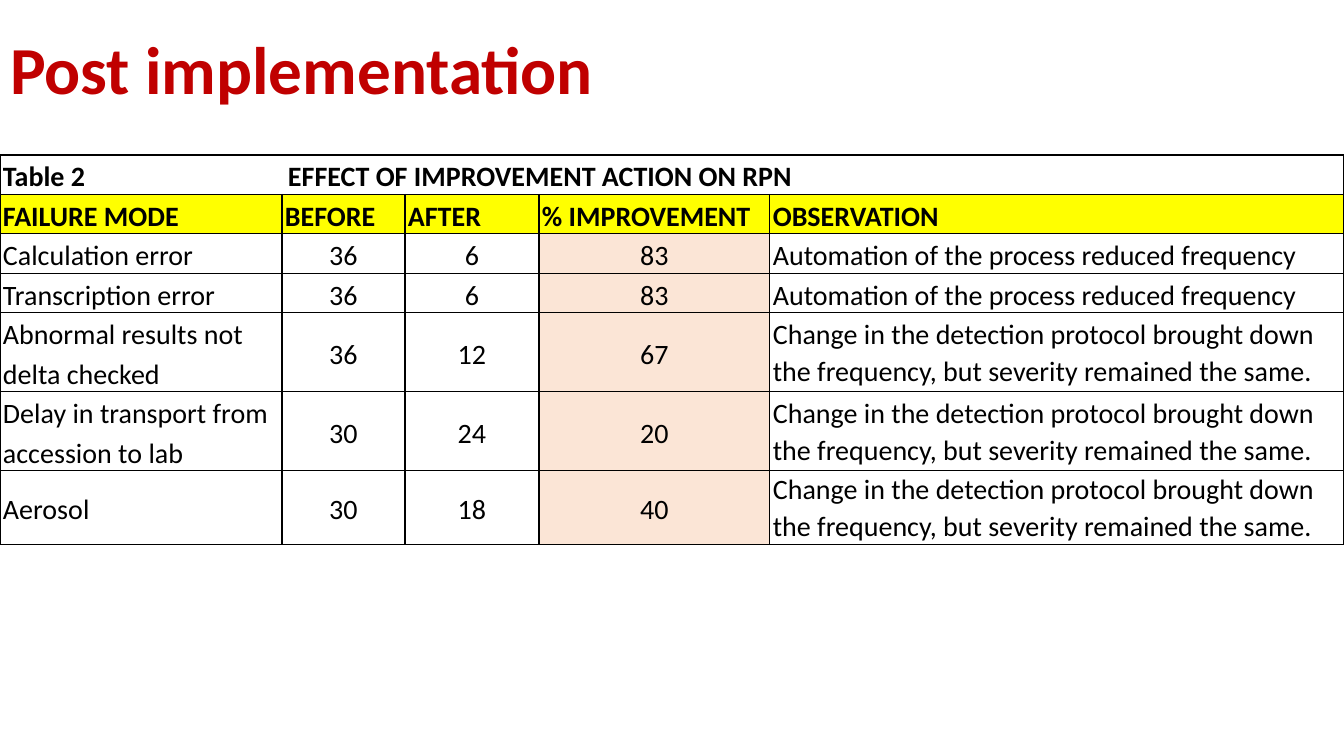
from lxml import etree
from pptx import Presentation
from pptx.dml.color import RGBColor
from pptx.enum.text import MSO_ANCHOR, MSO_AUTO_SIZE, PP_ALIGN
from pptx.oxml.ns import qn
from pptx.util import Pt

TOP, MIDDLE, BOTTOM = MSO_ANCHOR.TOP, MSO_ANCHOR.MIDDLE, MSO_ANCHOR.BOTTOM
LEFT, CENTER = PP_ALIGN.LEFT, PP_ALIGN.CENTER
NO_AUTOFIT = MSO_AUTO_SIZE.NONE

BLACK = RGBColor(0x00, 0x00, 0x00)
WHITE = RGBColor(0xFF, 0xFF, 0xFF)
RED = RGBColor(0xC0, 0x00, 0x00)
YELLOW = RGBColor(0xFF, 0xFF, 0x00)
PEACH = RGBColor(0xFB, 0xE5, 0xD6)

TITLE_ONLY = 5
PX_PER_INCH = 100.8

AUTOMATION = "Automation of the process reduced frequency"
DETECTION = ("Change in the detection protocol brought down the frequency, "
             "but severity remained the same.")
CAPTION = "Table 2\tEFFECT OF IMPROVEMENT ACTION ON RPN"
HEADER = ["FAILURE MODE", "BEFORE", "AFTER", "% IMPROVEMENT", "OBSERVATION"]
FAILURES = [
    ["Calculation error", "36", "6", "83", AUTOMATION],
    ["Transcription error", "36", "6", "83", AUTOMATION],
    ["Abnormal results not delta checked", "36", "12", "67", DETECTION],
    ["Delay in transport from accession to lab", "30", "24", "20", DETECTION],
    ["Aerosol", "30", "18", "40", DETECTION],
]
COL_WIDTHS = [282, 123, 134, 231, 574]
ROW_HEIGHTS = [39, 39, 39, 39, 79, 79, 73]
IMPROVEMENT_COL = 3


def px(n):
    return round(n * 914400 / PX_PER_INCH)


class SlideBuilder:
    font = "Calibri"
    title_size = 48
    body_size = 20
    border_width = 1
    cell_inset = 3

    def __init__(self, prs):
        self.slide = prs.slides.add_slide(prs.slide_layouts[TITLE_ONLY])

    def format_runs(self, p, size, color, bold):
        for r in p.runs:
            r.font.name = self.font
            r.font.size = Pt(size)
            r.font.color.rgb = color
            r.font.bold = bold

    def title(self, text, x, y, w, h):
        sp = self.slide.shapes.title
        sp.left, sp.top, sp.width, sp.height = map(px, (x, y, w, h))
        tf = sp.text_frame
        tf.text = text
        tf.auto_size = NO_AUTOFIT
        tf.vertical_anchor = TOP
        p = tf.paragraphs[0]
        p.alignment = LEFT
        p.line_spacing = 0.9
        self.format_runs(p, self.title_size, RED, True)

    def table(self, x, y, col_widths, row_heights):
        frame = self.slide.shapes.add_table(
            len(row_heights), len(col_widths), px(x), px(y),
            px(sum(col_widths)), px(sum(row_heights)))
        table = frame.table
        table.first_row = table.horz_banding = False
        for column, width in zip(table.columns, col_widths):
            column.width = px(width)
        for row, height in zip(table.rows, row_heights):
            row.height = px(height)
        for cell in table.iter_cells():
            self.borders(cell)
        return table

    def borders(self, cell):
        tc_pr = cell._tc.get_or_add_tcPr()
        for side in ("lnL", "lnR", "lnT", "lnB"):
            ln = etree.SubElement(tc_pr, qn(f"a:{side}"), w=str(Pt(self.border_width)))
            fill = etree.SubElement(ln, qn("a:solidFill"))
            etree.SubElement(fill, qn("a:srgbClr"), val=str(BLACK))

    def cell(self, cell, text, fill=WHITE, bold=False, anchor=MIDDLE,
             align=LEFT, spacing=1.15):
        cell.fill.solid()
        cell.fill.fore_color.rgb = fill
        cell.margin_left = cell.margin_right = px(self.cell_inset)
        cell.margin_top = cell.margin_bottom = 0
        cell.vertical_anchor = anchor
        p = cell.text_frame.paragraphs[0]
        p.text = text
        p.alignment = align
        p.line_spacing = spacing
        self.format_runs(p, self.body_size, BLACK, bold)

    def tab_stop(self, p, x):
        tabs = etree.SubElement(p._p.get_or_add_pPr(), qn("a:tabLst"))
        etree.SubElement(tabs, qn("a:tab"), pos=str(px(x)), algn="l")


def main():
    prs = Presentation()
    prs.slide_width, prs.slide_height = px(1344), px(756)
    builder = SlideBuilder(prs)
    builder.title("Post implementation", 0, 31, 1159, 146)

    table = builder.table(0, 155, COL_WIDTHS, ROW_HEIGHTS)
    caption = table.cell(0, 0)
    caption.merge(table.cell(0, len(COL_WIDTHS) - 1))
    builder.tab_stop(caption.text_frame.paragraphs[0], 285)
    builder.cell(caption, CAPTION, bold=True, anchor=BOTTOM)

    for col, text in enumerate(HEADER):
        builder.cell(table.cell(1, col), text, YELLOW, bold=True, anchor=BOTTOM)

    for row, values in enumerate(FAILURES, start=2):
        for col, text in enumerate(values):
            builder.cell(table.cell(row, col), text,
                         fill=PEACH if col == IMPROVEMENT_COL else WHITE,
                         align=CENTER if text.isdigit() else LEFT,
                         spacing=1.07 if text == DETECTION else 1.15)

    prs.save("out.pptx")


if __name__ == "__main__":
    main()
